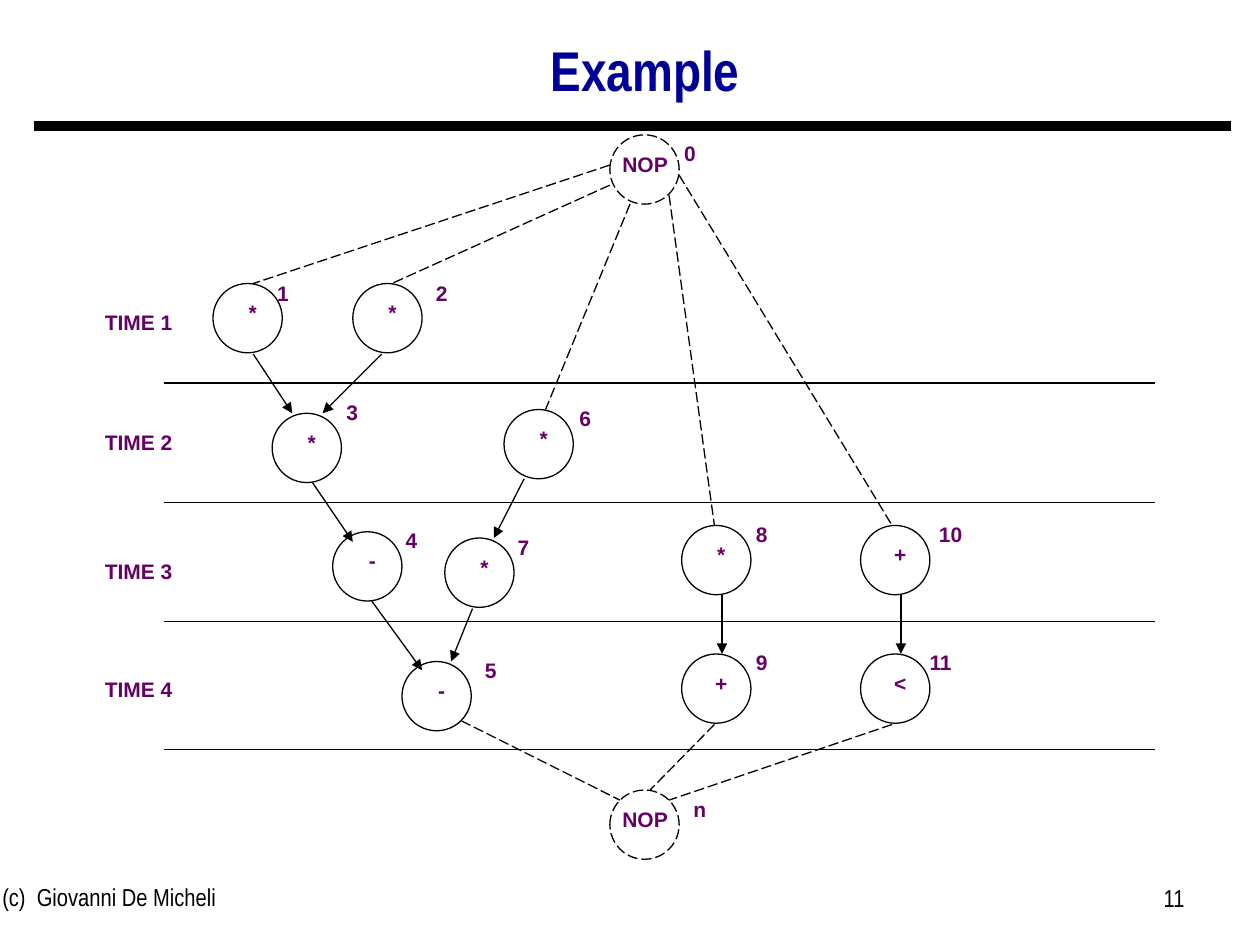
from typing import NamedTuple

from lxml.etree import SubElement
from pptx import Presentation
from pptx.dml.color import RGBColor
from pptx.enum.dml import MSO_LINE
from pptx.enum.shapes import MSO_CONNECTOR, MSO_SHAPE
from pptx.enum.text import MSO_ANCHOR, MSO_AUTO_SIZE, PP_ALIGN
from pptx.oxml.ns import qn
from pptx.util import Inches, Pt

BLACK = RGBColor(0x00, 0x00, 0x00)
NAVY = RGBColor(0x00, 0x00, 0x99)
PURPLE = RGBColor(0x66, 0x00, 0x66)

DIAMETER = 0.55
LABEL_HEIGHT = 0.3


class Node(NamedTuple):
    """An operation: circle corner, symbol, and its number's box corner."""
    name: str
    symbol: str
    left: float
    top: float
    name_left: float
    name_top: float


class Edge(NamedTuple):
    x1: float
    y1: float
    x2: float
    y2: float


NODES = [
    Node("0", "NOP", 4.84, 1.07, 5.08, 1.07),
    Node("1", "*", 1.69, 2.25, 1.85, 2.18),
    Node("2", "*", 2.80, 2.25, 3.11, 2.18),
    Node("3", "*", 2.16, 3.28, 2.40, 3.12),
    Node("4", "-", 2.64, 4.22, 2.87, 4.14),
    Node("5", "-", 3.19, 5.25, 3.50, 5.17),
    Node("6", "*", 4.00, 3.25, 4.25, 3.17),
    Node("7", "*", 3.53, 4.27, 3.76, 4.19),
    Node("8", "*", 5.41, 4.17, 5.65, 4.09),
    Node("9", "+", 5.41, 5.19, 5.65, 5.11),
    Node("10", "+", 6.83, 4.17, 7.15, 4.09),
    Node("11", "<", 6.83, 5.19, 7.07, 5.11),
    Node("n", "NOP", 4.84, 6.27, 5.16, 6.27),
]

# Dashed edges from the source NOP and into the sink NOP
NOP_EDGES = [
    Edge(4.84, 1.31, 2.01, 2.25),
    Edge(4.84, 1.47, 3.11, 2.25),
    Edge(5.00, 1.62, 4.33, 3.25),
    Edge(5.31, 1.55, 5.67, 4.17),
    Edge(5.39, 1.39, 7.08, 4.17),
    Edge(3.66, 5.72, 4.92, 6.35),
    Edge(5.67, 5.75, 5.16, 6.27),
    Edge(7.08, 5.75, 5.31, 6.35),
]

# Arrows between operations
DEPENDENCIES = [
    Edge(2.01, 2.81, 2.32, 3.28),
    Edge(3.03, 2.81, 2.56, 3.28),
    Edge(2.48, 3.83, 2.80, 4.30),
    Edge(2.95, 4.77, 3.35, 5.32),
    Edge(4.16, 3.80, 3.92, 4.27),
    Edge(3.75, 4.83, 3.58, 5.25),
    Edge(5.73, 4.72, 5.73, 5.19),
    Edge(7.15, 4.72, 7.15, 5.19),
]

# Label top and closing line of each time step
TIME_STEPS = [(2.41, 3.04), (3.36, 3.99), (4.38, 4.93), (5.32, 5.95)]


def write(frame, text: str, size: float, font: str, color: RGBColor,
          bold: bool = False, align=PP_ALIGN.CENTER) -> None:
    frame.text = text
    frame.word_wrap = True
    para = frame.paragraphs[0]
    para.alignment = align
    for span in para.runs:
        span.font.size = Pt(size)
        span.font.name = font
        span.font.bold = bold
        span.font.color.rgb = color


def add_label(page, text: str, left: float, top: float, width: float) -> None:
    box = page.shapes.add_textbox(
        Inches(left), Inches(top), Inches(width), Inches(LABEL_HEIGHT))
    write(box.text_frame, text, 12, "Arial", PURPLE, bold=True)


def add_footer(page, text: str, left: float, top: float, width: float, align) -> None:
    box = page.shapes.add_textbox(
        Inches(left), Inches(top), Inches(width), Inches(0.52))
    write(box.text_frame, text, 14, "Arial Narrow", BLACK, align=align)


def add_line(page, edge: Edge, width: float = 0.75,
             dashed: bool = False, arrow: bool = False) -> None:
    line = page.shapes.add_connector(
        MSO_CONNECTOR.STRAIGHT, *(Inches(value) for value in edge))
    line.line.color.rgb = BLACK
    line.line.width = Pt(width)
    if dashed:
        line.line.dash_style = MSO_LINE.LONG_DASH
    if arrow:
        SubElement(line.line._get_or_add_ln(), qn("a:tailEnd"), type="triangle")
    SubElement(line._element.spPr, qn("a:effectLst"))


def add_node(page, node: Node) -> None:
    is_nop = node.symbol == "NOP"
    circle = page.shapes.add_shape(
        MSO_SHAPE.OVAL, Inches(node.left), Inches(node.top),
        Inches(DIAMETER), Inches(DIAMETER))
    circle.shadow.inherit = False
    circle.fill.background()
    circle.line.color.rgb = BLACK
    circle.line.width = Pt(0.75)
    if is_nop:
        circle.line.dash_style = MSO_LINE.LONG_DASH
    symbol_left, symbol_width = (node.left - 0.23, 1.02) if is_nop else (node.left, 0.63)
    add_label(page, node.symbol, symbol_left, node.top + 0.08, symbol_width)


def main() -> None:
    deck = Presentation()
    deck.slide_width, deck.slide_height = Inches(10), Inches(7.5)
    page = deck.slides.add_slide(deck.slide_layouts[5])

    # Title, rule and footer
    title = page.shapes.title
    title.left, title.top = Inches(0.87), Inches(0.22)
    title.width, title.height = Inches(8.5), Inches(0.72)
    write(title.text_frame, "Example", 32, "Arial Narrow", NAVY, bold=True)
    title.text_frame.auto_size = MSO_AUTO_SIZE.NONE
    title.text_frame.vertical_anchor = MSO_ANCHOR.MIDDLE
    title.text_frame.paragraphs[0].line_spacing = 0.9
    add_line(page, Edge(0.27, 1, 9.77, 1), width=6)
    add_footer(page, "(c)  Giovanni De Micheli", -0.08, 6.95, 3.17, PP_ALIGN.LEFT)
    add_footer(page, "11", 7.17, 6.96, 2.33, PP_ALIGN.RIGHT)

    # Operations
    for node in NODES:
        add_node(page, node)

    # Time steps
    for number, (label_top, line_y) in enumerate(TIME_STEPS, start=1):
        add_line(page, Edge(1.3, line_y, 9.17, line_y))
        add_label(page, f"TIME {number}", 0.51, label_top, 1.18)

    # Edges
    for edge in NOP_EDGES:
        add_line(page, edge, dashed=True)
    for edge in DEPENDENCIES:
        add_line(page, edge, arrow=True)

    # Operation numbers
    for node in NODES:
        add_label(page, node.name, node.name_left, node.name_top, 0.79)

    deck.save("out.pptx")


if __name__ == "__main__":
    main()
